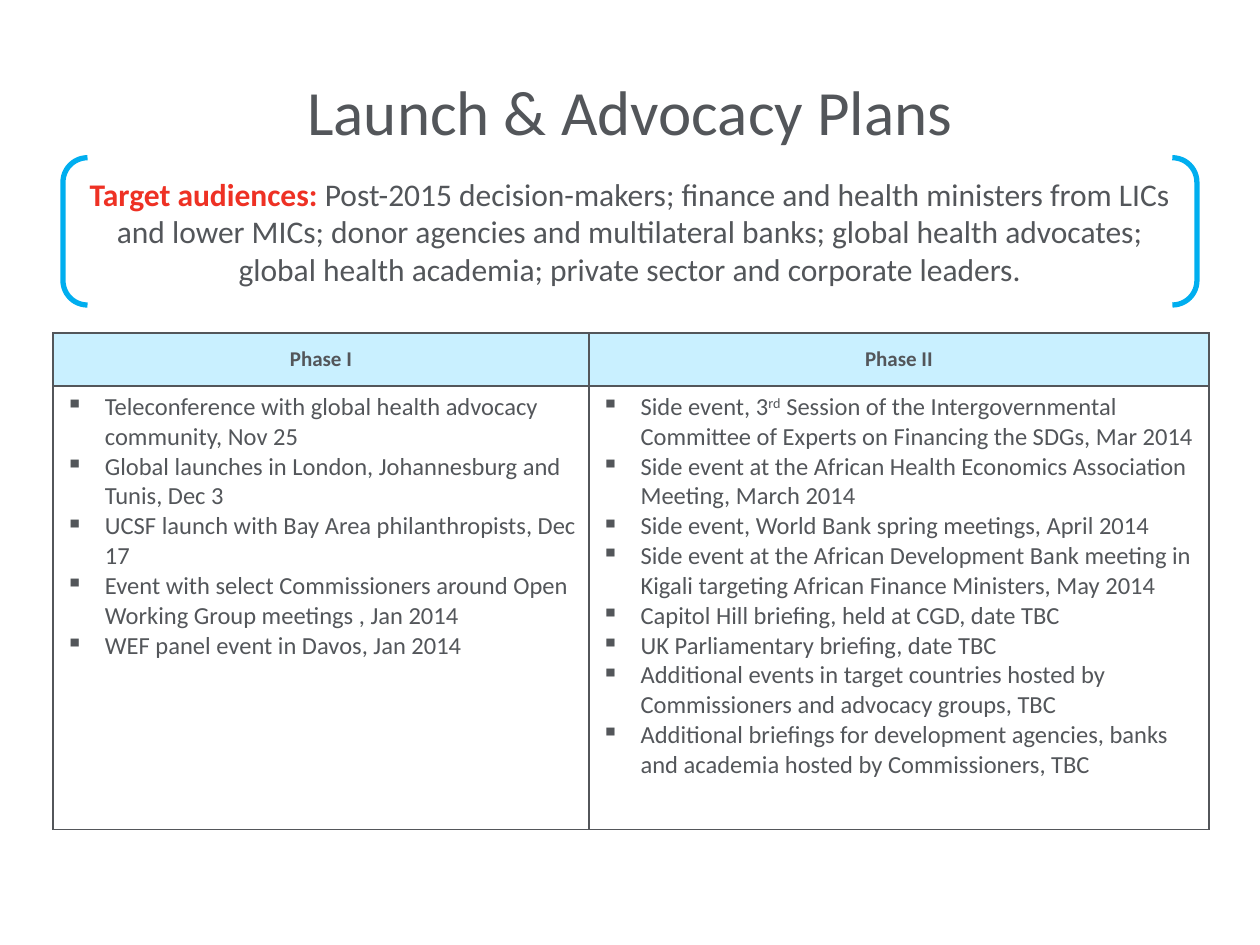
"""Build the launch and advocacy plans slide."""
from lxml import etree
from pptx import Presentation
from pptx.dml.color import RGBColor
from pptx.enum import shapes, text
from pptx.oxml import ns
from pptx.util import Cm, Pt

INK, RED, BLUE, PALE = "53565A", "EE3124", "00AEEF", "C9F0FF"

PHASES = {
    "Phase I": [
        ["Teleconference with global health advocacy community, Nov 25"],
        ["Global launches in London, Johannesburg and Tunis, Dec 3"],
        ["UCSF launch with Bay Area philanthropists, Dec 17"],
        ["Event with select Commissioners around Open Working Group meetings , Jan 2014"],
        ["WEF panel event in Davos, Jan 2014"],
    ],
    "Phase II": [
        ["Side event, 3", "rd", " Session of the Intergovernmental Committee of "
         "Experts on Financing the SDGs, Mar 2014"],
        ["Side event at the African Health Economics Association Meeting, March 2014"],
        ["Side event, World Bank spring meetings, April 2014"],
        ["Side event at the African Development Bank meeting in Kigali targeting "
         "African Finance Ministers, May 2014"],
        ["Capitol Hill briefing, held at CGD, date TBC"],
        ["UK Parliamentary briefing, date TBC"],
        ["Additional events in target countries hosted by Commissioners and "
         "advocacy groups, TBC"],
        ["Additional briefings for development agencies, banks and academia "
         "hosted by Commissioners, TBC"],
    ],
}


def paint(code):
    return RGBColor.from_string(code)


def add(root, tag, **attrs):
    return etree.SubElement(root, ns.qn(tag), attrs)


class Deck:
    def __init__(self, font, ink):
        self.font, self.ink = font, ink
        self.prs = Presentation()
        self.prs.slide_width, self.prs.slide_height = Cm(25.4), Cm(19.05)
        self.slide = self.prs.slides.add_slide(self.prs.slide_layouts[5])

    def style(self, para, size, bold=False, align=text.PP_ALIGN.CENTER):
        para.alignment = align
        font = para.font
        font.name, font.size, font.bold = self.font, Pt(size), bold
        font.color.rgb = paint(self.ink)

    def title(self, words, box, size):
        shape = self.slide.shapes.title
        shape.left, shape.top, shape.width, shape.height = map(Cm, box)
        frame = shape.text_frame
        frame.text = words
        frame.vertical_anchor = text.MSO_ANCHOR.MIDDLE
        self.style(frame.paragraphs[0], size)

    def bracket(self, lead, words, box, size):
        shape = self.slide.shapes.add_shape(
            shapes.MSO_SHAPE.DOUBLE_BRACKET, *map(Cm, box))
        shape.shadow.inherit = False
        shape.fill.background()
        shape.line.color.rgb = paint(BLUE)
        shape.line.width = Pt(3)
        frame = shape.text_frame
        frame.word_wrap = True
        frame.vertical_anchor = text.MSO_ANCHOR.MIDDLE
        para = frame.paragraphs[0]
        para.alignment = text.PP_ALIGN.CENTER
        for part, color, bold in ((lead, RED, True), (words, self.ink, False)):
            run = para.add_run()
            run.text = part
            font = run.font
            font.name, font.size, font.bold = self.font, Pt(size), bold
            font.color.rgb = paint(color)

    def border(self, cell):
        props = cell._tc.get_or_add_tcPr()
        for side in "LRTB":
            line = add(props, f"a:ln{side}", w=str(Pt(1)))
            add(add(line, "a:solidFill"), "a:srgbClr", val=self.ink)

    def items(self, cell, rows):
        frame = cell.text_frame
        for i, parts in enumerate(rows):
            para = frame.add_paragraph() if i else frame.paragraphs[0]
            props = para._p.get_or_add_pPr()
            props.set("marL", str(Cm(0.79)))
            props.set("indent", str(-Cm(0.79)))
            add(props, "a:buChar", char="▪")
            self.style(para, 14, align=text.PP_ALIGN.LEFT)
            for j, part in enumerate(parts):
                run = para.add_run()
                run.text = part
                if j % 2:
                    run._r.get_or_add_rPr().set("baseline", "30000")

    def table(self, data, left, top, widths, heights):
        grid = self.slide.shapes.add_table(
            2, len(data), Cm(left), Cm(top), Cm(sum(widths)), Cm(sum(heights))).table
        grid.first_row = grid.horz_banding = False
        for row, height in zip(grid.rows, heights):
            row.height = Cm(height)
        for i, (name, rows) in enumerate(data.items()):
            grid.columns[i].width = Cm(widths[i])
            head, body = grid.cell(0, i), grid.cell(1, i)
            self.border(head)
            self.border(body)
            head.fill.solid()
            head.fill.fore_color.rgb = paint(PALE)
            body.fill.background()
            head.text = name
            head.vertical_anchor = text.MSO_ANCHOR.MIDDLE
            self.style(head.text_frame.paragraphs[0], 12, bold=True)
            self.items(body, rows)


def main():
    deck = Deck("Calibri", INK)
    deck.title("Launch & Advocacy Plans", (1.27, 0.64, 22.86, 3.18), 36)
    deck.table(PHASES, 1.07, 6.71, (10.8, 12.5), (1.07, 8.94))
    deck.bracket(
        "Target audiences: ",
        "Post-2015 decision-makers; finance and health ministers from LICs and "
        "lower MICs; donor agencies and multilateral banks; global health "
        "advocates; global health academia; private sector and corporate leaders.",
        (1.27, 3.18, 22.86, 2.97), 18)
    deck.prs.save("out.pptx")


if __name__ == "__main__":
    main()
